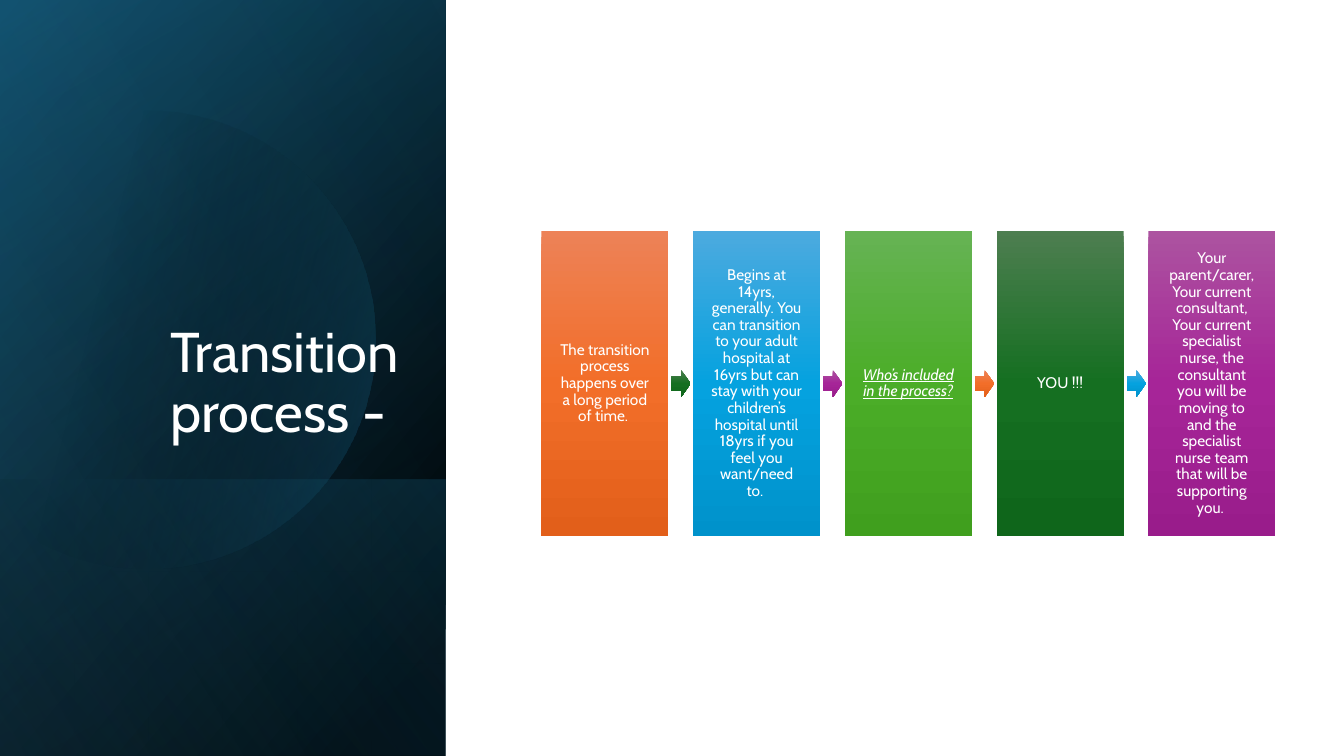
from dataclasses import dataclass
from math import acos, cos, radians, sin

from lxml.etree import SubElement
from pptx import Presentation
from pptx.dml.color import RGBColor
from pptx.enum.shapes import MSO_SHAPE as Shape
from pptx.enum.text import MSO_ANCHOR as Anchor, PP_ALIGN as Align
from pptx.oxml.ns import qn
from pptx.util import Inches, Pt

# Content: text, palette of the box, palette of the arrow after it, emphasis
TITLE = "Transition process - "
STEPS = [
    ("The transition process happens over a long period of time. ",
     "orange", "forest", False),
    ("Begins at 14yrs, generally. You can transition to your adult hospital at "
     "16yrs but can stay with your children’s hospital until 18yrs if you feel "
     "you want/need to. ", "blue", "purple", False),
    ("Who’s included in the process? ", "green", "orange", True),
    ("YOU !!!", "forest", "blue", False),
    ("Your parent/carer, Your current consultant, Your current specialist "
     "nurse, the consultant you will be moving to and the specialist nurse "
     "team that will be supporting you. ", "purple", None, False),
]


@dataclass(frozen=True)
class Theme:
    font: str = "Cabin"
    white: str = "FFFFFF"
    title_size: int = 40
    step_size: int = 11
    line_spacing: float = 0.9


THEME = Theme()
PALETTES = {
    "orange": ("ED8257", "F26E29", "E25F1A"),
    "blue": ("4CAADF", "05A2DF", "0092CB"),
    "green": ("66B354", "4BAD28", "409F1E"),
    "forest": ("4D7E50", "156F21", "0F661B"),
    "purple": ("AC53A0", "A62598", "991C8B"),
}

# Panel washes: gradient stops are (position %, colour, opacity %)
BASE = ([(8, "000000", 100), (100, "104862", 100)], 50)
GLOW = ([(0, "000000", 0), (99, "156082", 46)], 30)
FOOT = ([(2, "156082", 29), (100, "000000", 30)], 130)
DISC = ([(29, "000000", 0), (100, "156082", 43)], 14)
SHEEN = ([(0, "000000", 0), (99, "46B1E1", 11)], 120)

# Layout in inches
SLIDE_W, SLIDE_H = 13.33, 7.5
PANEL_W, FOOT_H = 4.42, 2.74
DISC_X, DISC_Y, DISC_R = 1.45, 3.37, 2.27
STEP_LEFT, STEP_TOP, STEP_W, STEP_H = 5.37, 2.29, 1.26, 3.03
STEP_PITCH = (11.39 - STEP_LEFT) / (len(STEPS) - 1)
ARROW_W, ARROW_H, ARROW_GAP = 0.19, 0.27, 0.03
STEP_INSET = 0.17


def paint(shape, stops, angle):
    """Give a shape a linear gradient, no line and no shadow."""
    shape.shadow.inherit = False
    shape.line.fill.background()
    shape.fill.gradient()
    gradient = shape._element.spPr.find(qn("a:gradFill"))
    for child in list(gradient):
        gradient.remove(child)
    gradient.set("rotWithShape", "1")
    stop_list = SubElement(gradient, qn("a:gsLst"))
    for position, colour, opacity in stops:
        stop = SubElement(stop_list, qn("a:gs"), pos=str(position * 1000))
        tint = SubElement(stop, qn("a:srgbClr"), val=colour)
        if opacity < 100:
            SubElement(tint, qn("a:alpha"), val=str(opacity * 1000))
    SubElement(gradient, qn("a:lin"), ang=str(angle * 60000), scaled="0")


def add_block(page, kind, left, top, width, height, palette):
    shape = page.shapes.add_shape(
        kind, Inches(left), Inches(top), Inches(width), Inches(height))
    stops = [(50 * i, colour, 100) for i, colour in enumerate(PALETTES[palette])]
    paint(shape, stops, 90)
    return shape


def add_wash(page, top, height, wash):
    """Cover the panel from top down with a mirrored quarter-turned rectangle."""
    left = (PANEL_W - height) / 2
    turned_top = top + (height - PANEL_W) / 2
    shape = page.shapes.add_shape(
        Shape.RECTANGLE, Inches(left), Inches(turned_top),
        Inches(height), Inches(PANEL_W))
    shape.rotation = 90
    shape._element.spPr.find(qn("a:xfrm")).set("flipH", "1")
    paint(shape, *wash)


def add_disc(page):
    """Draw the circle, cut off at the slide's left edge."""
    reach = acos(-DISC_X / DISC_R)
    steps = 120
    angles = [reach * (2 * i / steps - 1) for i in range(steps + 1)]
    points = [(Inches(DISC_X + DISC_R * cos(a)), Inches(DISC_Y + DISC_R * sin(a)))
              for a in angles]
    builder = page.shapes.build_freeform(*points[0])
    builder.add_line_segments(points[1:], close=True)
    paint(builder.convert_to_shape(), *DISC)


def write(box, text, size, align, anchor, inset=None, emphasis=False):
    frame = box.text_frame
    frame.word_wrap = True
    frame.vertical_anchor = anchor
    if inset is not None:
        frame.margin_left = frame.margin_right = Inches(inset)
        frame.margin_top = frame.margin_bottom = Inches(inset)
    para = frame.paragraphs[0]
    para.text = text
    para.alignment = align
    para.line_spacing = THEME.line_spacing
    para.font.name = THEME.font
    para.font.size = Pt(size)
    para.font.color.rgb = RGBColor.from_string(THEME.white)
    if emphasis:
        para.font.italic = para.font.underline = True


def main():
    deck = Presentation()
    deck.slide_width, deck.slide_height = Inches(SLIDE_W), Inches(SLIDE_H)
    page = deck.slides.add_slide(deck.slide_layouts[6])

    # Dark panel with title
    add_wash(page, 0, SLIDE_H, BASE)
    add_wash(page, 0, SLIDE_H, GLOW)
    add_wash(page, SLIDE_H - FOOT_H, FOOT_H, FOOT)
    add_disc(page)
    add_wash(page, 0, SLIDE_H, SHEEN)
    title = page.shapes.add_textbox(
        Inches(0.64), Inches(1.84), Inches(3.41), Inches(2.62))
    write(title, TITLE, THEME.title_size, Align.RIGHT, Anchor.BOTTOM)

    # Steps and the arrows between them
    arrow_top = STEP_TOP + (STEP_H - ARROW_H) / 2
    for i, (text, palette, arrow_palette, emphasis) in enumerate(STEPS):
        left = STEP_LEFT + i * STEP_PITCH
        box = add_block(page, Shape.RECTANGLE, left, STEP_TOP,
                        STEP_W, STEP_H, palette)
        write(box, text, THEME.step_size, Align.CENTER, Anchor.MIDDLE,
              STEP_INSET, emphasis)
        if arrow_palette:
            add_block(page, Shape.RIGHT_ARROW, left + STEP_W + ARROW_GAP,
                      arrow_top, ARROW_W, ARROW_H, arrow_palette)

    deck.save("out.pptx")


if __name__ == "__main__":
    main()
